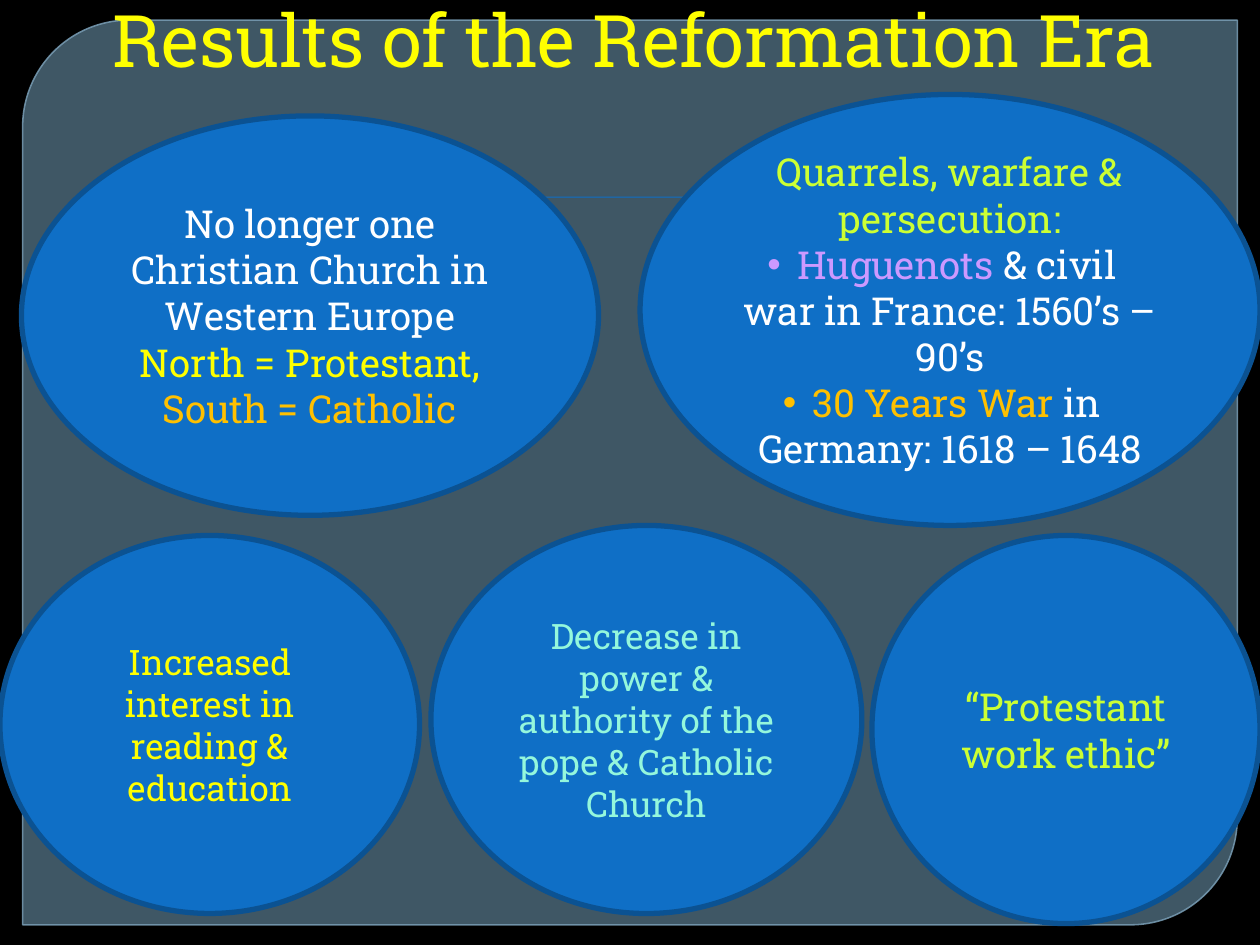
"""Build the slide on the results of the Reformation era."""
import pptx
import pptx.util
import pptx.dml.color
import pptx.enum.shapes
import pptx.enum.text
import pptx.oxml
import pptx.oxml.ns
from lxml import etree

Inches, Pt = pptx.util.Inches, pptx.util.Pt
RGBColor = pptx.dml.color.RGBColor
MSO_SHAPE = pptx.enum.shapes.MSO_SHAPE
MSO_ANCHOR = pptx.enum.text.MSO_ANCHOR
PP_ALIGN = pptx.enum.text.PP_ALIGN
qn = pptx.oxml.ns.qn

BLACK = RGBColor(0x00, 0x00, 0x00)
WHITE = RGBColor(0xFF, 0xFF, 0xFF)
SLATE = RGBColor(0x61, 0x86, 0x9C)
PALE_SLATE = RGBColor(0x77, 0x9B, 0xB2)
BLUE = RGBColor(0x0F, 0x6F, 0xC6)
DARK_BLUE = RGBColor(0x0B, 0x52, 0x92)
YELLOW = RGBColor(0xFF, 0xFF, 0x00)
ORANGE = RGBColor(0xFF, 0xC0, 0x00)
LIME = RGBColor(0xCC, 0xFF, 0x33)
LILAC = RGBColor(0xCC, 0x99, 0xFF)
MINT = RGBColor(0x94, 0xF7, 0xDC)
FONT = "Roboto Slab"

TITLE = "Results of the Reformation Era"
RESULTS = [
    ((0.17, 0.92, 4.58, 3.17), 22, [
        (False, [("No longer one Christian Church in Western Europe", WHITE)]),
        (False, [("North = Protestant, ", YELLOW), ("South = Catholic", ORANGE)]),
    ]),
    ((0, 4.25, 3.33, 3), 20, [
        (False, [("Increased interest in reading & education", YELLOW)]),
    ]),
    ((3.42, 4.17, 3.42, 3.08), 20, [
        (False, [("Decrease in power & authority of the pope & Catholic Church", MINT)]),
    ]),
    ((6.92, 4.25, 3.08, 3.08), 22, [
        (False, [("“Protestant work ethic”", LIME)]),
    ]),
    ((5.08, 0.75, 4.92, 3.42), 22, [
        (False, [("Quarrels, warfare & persecution:", LIME)]),
        (True, [("Huguenots", LILAC), (" & civil war in France: 1560’s –90’s", WHITE)]),
        (True, [("30 Years War ", ORANGE), ("in Germany: 1618 – 1648", WHITE)]),
    ]),
]


def add_filled(slide, preset, box, fill):
    shape = slide.shapes.add_shape(preset, *map(Inches, box))
    shape.shadow.inherit = False
    shape.fill.solid()
    shape.fill.fore_color.rgb = fill
    return shape


def set_line(shape, color, width):
    shape.line.color.rgb = color
    shape.line.width = Pt(width)


def set_alpha(shape, percents):
    colors = shape.element.spPr.iter(qn("a:srgbClr"))
    for color, percent in zip(list(colors), percents):
        etree.SubElement(color, qn("a:alpha"), val=str(percent * 1000))


def style_run(run, size, color):
    run.font.name = FONT
    run.font.size = Pt(size)
    run.font.color.rgb = color


def add_bullet(paragraph):
    properties = paragraph._p.get_or_add_pPr()
    etree.SubElement(properties, qn("a:buFont"), typeface="Arial")
    etree.SubElement(properties, qn("a:buChar"), char="•")


def add_backdrop(slide):
    panel = add_filled(slide, MSO_SHAPE.ROUND_2_DIAG_RECTANGLE,
                       (0.18, 0.16, 9.64, 7.18), SLATE)
    panel.adjustments[0], panel.adjustments[1] = 0.118, 0
    set_line(panel, PALE_SLATE, 0.87)
    set_alpha(panel, (65, 88))
    rule = add_filled(slide, MSO_SHAPE.RECTANGLE, (0.64, 1.56, 8.75, 0.01), BLUE)
    rule.line.fill.background()


def fill_title(title):
    title.left, title.top, title.width, title.height = map(Inches, (0.5, 0, 9, 0.7))
    frame = title.text_frame
    frame.text = TITLE
    frame.vertical_anchor = MSO_ANCHOR.BOTTOM
    frame.word_wrap = True
    heading = frame.paragraphs[0]
    heading.alignment = PP_ALIGN.CENTER
    heading._p.get_or_add_pPr().set("marL", str(Inches(0.06)))
    style_run(heading.runs[0], 41.4, YELLOW)


def add_result(slide, box, size, lines):
    oval = add_filled(slide, MSO_SHAPE.OVAL, box, BLUE)
    set_line(oval, DARK_BLUE, 3)
    frame = oval.text_frame
    frame.word_wrap = True
    frame.vertical_anchor = MSO_ANCHOR.MIDDLE
    for index, (bulleted, parts) in enumerate(lines):
        paragraph = frame.add_paragraph() if index else frame.paragraphs[0]
        paragraph.alignment = PP_ALIGN.CENTER
        if bulleted:
            add_bullet(paragraph)
        for words, color in parts:
            run = paragraph.add_run()
            run.text = words
            style_run(run, size, color)


def main():
    deck = pptx.Presentation()
    deck.slide_width, deck.slide_height = Inches(10), Inches(7.5)
    slide = deck.slides.add_slide(deck.slide_layouts[5])
    slide.background.fill.solid()
    slide.background.fill.fore_color.rgb = BLACK
    add_backdrop(slide)
    title = slide.shapes.title
    fill_title(title)
    slide.shapes.element.append(title.element)
    for box, size, lines in RESULTS:
        add_result(slide, box, size, lines)
    deck.save("out.pptx")


if __name__ == "__main__":
    main()
